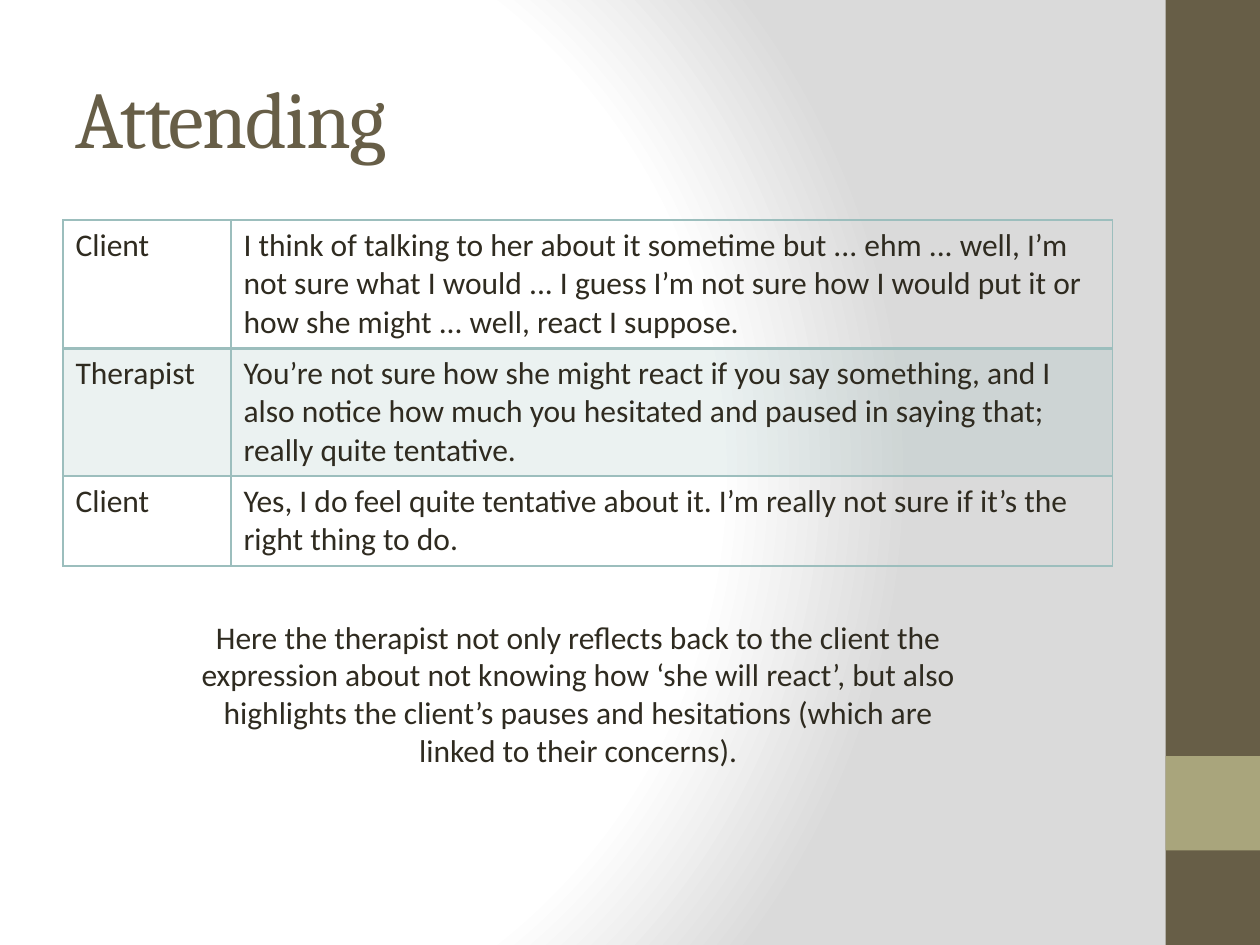
from pptx import Presentation
from pptx.dml.color import RGBColor
from pptx.enum.shapes import MSO_SHAPE as Shape
from pptx.enum.text import MSO_ANCHOR as Anchor, MSO_AUTO_SIZE as AutoSize, PP_ALIGN as Align
from pptx.oxml import parse_xml
from pptx.oxml.ns import nsdecls
from pptx.util import Inches, Pt

COLORS = {
    "white": "FFFFFF",
    "shade": "DADADA",
    "brown": "675E47",
    "olive": "A9A57C",
    "teal": "9CBEBD",
    "ink": "2F2B20",
}
WIDTH, HEIGHT = Inches(10), Inches(7.5)
DIALOGUE = [
    ("Client", "I think of talking to her about it sometime but ... ehm ... well, I’m not sure "
     "what I would ... I guess I’m not sure how I would put it or how she might ... well, react I suppose."),
    ("Therapist", "You’re not sure how she might react if you say something, and I also notice "
     "how much you hesitated and paused in saying that; really quite tentative."),
    ("Client", "Yes, I do feel quite tentative about it. I’m really not sure if it’s the right thing to do."),
]
ROW_SHARES = (0.37, 0.37, 0.26)
LABEL_SHARE = 0.16
COMMENT = ("Here the therapist not only reflects back to the client the expression about not knowing "
           "how ‘she will react’, but also highlights the client’s pauses and hesitations "
           "(which are linked to their concerns).")


def region(left, top, width, height):
    return tuple(int(part) for part in (left * WIDTH, top * HEIGHT, width * WIDTH, height * HEIGHT))


def color(name):
    return RGBColor.from_string(COLORS[name])


def format_text(para, size=18, font="Calibri", ink="ink"):
    for span in para.runs:
        span.font.size = Pt(size)
        span.font.name = font
        span.font.color.rgb = color(ink)


def paint_background(page):
    stops = "".join(
        f'<a:gs pos="{share * 1000}"><a:srgbClr val="{COLORS[name]}"/></a:gs>'
        for share, name in ((0, "white"), (75, "white"), (100, "shade"))
    )
    page._element.cSld.insert(0, parse_xml(
        f'<p:bg {nsdecls("p", "a")}><p:bgPr><a:gradFill rotWithShape="1"><a:gsLst>{stops}</a:gsLst>'
        '<a:path path="circle"><a:fillToRect l="20000" t="50000" r="100000" b="50000"/></a:path>'
        '</a:gradFill><a:effectLst/></p:bgPr></p:bg>'
    ))


def add_sidebar(page, box):
    left, top, width, height = box
    accent = (left, top + int(height * 0.8), width, int(height * 0.1))
    for area, name in ((box, "brown"), (accent, "olive")):
        band = page.shapes.add_shape(Shape.RECTANGLE, *area)
        band.shadow.inherit = False
        band.fill.solid()
        band.fill.fore_color.rgb = color(name)
        band.line.fill.background()


def add_title(page, box):
    title = page.shapes.title
    title.left, title.top, title.width, title.height = box
    frame = title.text_frame
    frame.text = "Attending"
    frame.vertical_anchor = Anchor.MIDDLE
    para = frame.paragraphs[0]
    para.alignment = Align.LEFT
    format_text(para, 46, "Cambria", "brown")
    para.runs[0].font._element.set("spc", "-100")


def set_borders(cell, widths):
    properties = cell._tc.get_or_add_tcPr()
    for index, (side, points) in enumerate(widths.items()):
        properties.insert(index, parse_xml(
            f'<a:ln{side} {nsdecls("a")} w="{Pt(points)}"><a:solidFill>'
            f'<a:srgbClr val="{COLORS["teal"]}"/></a:solidFill></a:ln{side}>'
        ))


def fill_cell(cell, tinted):
    if not tinted:
        cell.fill.background()
        return
    cell.fill.solid()
    cell.fill.fore_color.rgb = color("teal")
    tint = cell._tc.tcPr.find(".//{*}srgbClr")
    tint.append(parse_xml(f'<a:alpha {nsdecls("a")} val="20000"/>'))


def add_dialogue(page, box):
    width, height = box[2:]
    table = page.shapes.add_table(len(DIALOGUE), 2, *box).table
    table.first_row = table.horz_banding = False
    for column, share in zip(table.columns, (LABEL_SHARE, 1 - LABEL_SHARE)):
        column.width = int(width * share)
    for index, (row, texts) in enumerate(zip(table.rows, DIALOGUE)):
        row.height = int(height * ROW_SHARES[index])
        widths = {"L": 1, "R": 1, "T": 2 if index == 1 else 1, "B": 2 if index == 0 else 1}
        for cell, text in zip(row.cells, texts):
            cell.text_frame.text = text
            format_text(cell.text_frame.paragraphs[0])
            fill_cell(cell, index == 1)
            set_borders(cell, widths)


def add_comment(page, box):
    frame = page.shapes.add_textbox(*box).text_frame
    frame.word_wrap = True
    frame.auto_size = AutoSize.SHAPE_TO_FIT_TEXT
    frame.text = COMMENT
    para = frame.paragraphs[0]
    para.alignment = Align.CENTER
    format_text(para)


def main():
    deck = Presentation()
    deck.slide_width, deck.slide_height = WIDTH, HEIGHT
    page = deck.slides.add_slide(deck.slide_layouts[5])
    paint_background(page)
    add_sidebar(page, region(0.925, 0, 0.075, 1))
    add_title(page, region(0.05, 0.04, 0.833, 0.167))
    add_dialogue(page, region(0.05, 0.233, 0.833, 0.366))
    add_comment(page, region(0.14, 0.647, 0.638, 0.216))
    deck.save("out.pptx")


if __name__ == "__main__":
    main()
